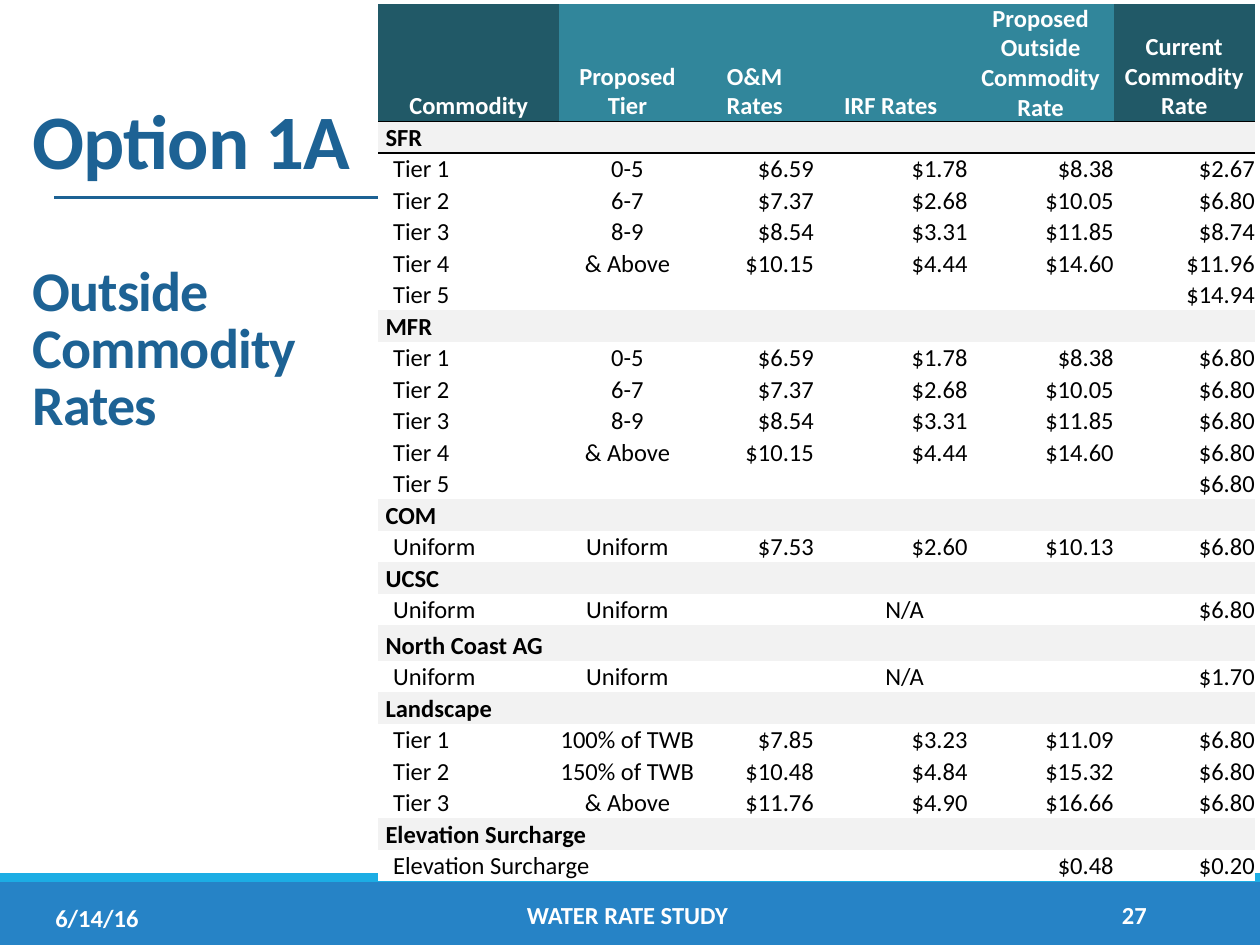
"""Build the Option 1A slide of outside commodity water rates."""
from dataclasses import dataclass

from lxml import etree
from pptx import Presentation
from pptx.dml.color import RGBColor
from pptx.enum.shapes import MSO_CONNECTOR, MSO_SHAPE
from pptx.enum.text import MSO_ANCHOR, PP_ALIGN
from pptx.oxml.ns import qn
from pptx.util import Inches, Pt

LEFT, CENTER, RIGHT = PP_ALIGN.LEFT, PP_ALIGN.CENTER, PP_ALIGN.RIGHT
MIDDLE, BOTTOM = MSO_ANCHOR.MIDDLE, MSO_ANCHOR.BOTTOM
RECTANGLE, STRAIGHT = MSO_SHAPE.RECTANGLE, MSO_CONNECTOR.STRAIGHT
GRID_COLUMNS, GRID_ROWS = 1000, 750
GRID_UNIT = Inches(0.01)
PLAIN_TABLE = "{2D5ABB26-0587-4C30-8999-92F81FD0307C}"


@dataclass(frozen=True)
class Theme:
    """Colours, font and type sizes of the slide."""
    font: str = "Calibri"
    white: str = "FFFFFF"
    black: str = "000000"
    footer: str = "2683C6"
    footer_edge: str = "1CADE4"
    heading: str = "1D6294"
    header_dark: str = "215967"
    header_light: str = "31869B"
    section: str = "F2F2F2"
    body_size: int = 14
    title_size: int = 44
    subtitle_size: int = 32


@dataclass(frozen=True)
class Area:
    """A rectangle in grid columns and rows."""
    column: int
    row: int
    columns: int
    rows: int

    def lengths(self) -> list:
        """Return left, top, width and height."""
        return [n * GRID_UNIT for n in (self.column, self.row, self.columns, self.rows)]


@dataclass(frozen=True)
class Line:
    """A footer text with its place and alignment."""
    text: str
    area: Area
    align: PP_ALIGN


@dataclass(frozen=True)
class Section:
    """A customer class and its rate rows."""
    name: str
    rates: tuple
    name_height: int = 25
    name_span: int = 1
    no_rate_anchor: MSO_ANCHOR = BOTTOM


THEME = Theme()
TABLE_AREA = Area(300, 3, 696, 699)
COLUMN_WIDTHS = (144, 108, 94, 122, 116, 112)
HEADER_HEIGHT, RATE_HEIGHT = 72, 25
NAME_INDENT, RATE_INDENT = 6, 12
HEADERS = ("Commodity", "Proposed Tier", "O&M\nRates", "IRF Rates",
           "Proposed Outside Commodity Rate", "Current Commodity Rate")
TIERS = (
    ("Tier 1", "0-5", "$6.59", "$1.78", "$8.38"),
    ("Tier 2", "6-7", "$7.37", "$2.68", "$10.05"),
    ("Tier 3", "8-9", "$8.54", "$3.31", "$11.85"),
    ("Tier 4", "& Above", "$10.15", "$4.44", "$14.60"),
    ("Tier 5", "", "", "", ""),
)


def tiered(*current_rates: str) -> tuple:
    """Add current rates to the shared residential tiers."""
    return tuple((*tier, rate) for tier, rate in zip(TIERS, current_rates))


SECTIONS = (
    Section("SFR", tiered("$2.67", "$6.80", "$8.74", "$11.96", "$14.94")),
    Section("MFR", tiered(*["$6.80"] * 5)),
    Section("COM", (("Uniform", "Uniform", "$7.53", "$2.60", "$10.13", "$6.80"),)),
    Section("UCSC", (("Uniform", "Uniform", "N/A", "", "", "$6.80"),),
            no_rate_anchor=MIDDLE),
    Section("North Coast AG", (("Uniform", "Uniform", "N/A", "", "", "$1.70"),),
            name_height=28),
    Section("Landscape", (
        ("Tier 1", "100% of TWB", "$7.85", "$3.23", "$11.09", "$6.80"),
        ("Tier 2", "150% of TWB", "$10.48", "$4.84", "$15.32", "$6.80"),
        ("Tier 3", "& Above", "$11.76", "$4.90", "$16.66", "$6.80"))),
    Section("Elevation Surcharge",
            (("Elevation Surcharge", "", "", "", "$0.48", "$0.20"),), name_span=2),
)
FOOTER = (
    Line("WATER RATE STUDY", Area(145, 706, 706, 40), CENTER),
    Line("27", Area(851, 706, 69, 40), RIGHT),
    Line("6/14/16", Area(34, 708, 111, 40), LEFT),
)


def style(paragraph, color: str, size: int, bold: bool, align: PP_ALIGN) -> None:
    """Set the font and alignment of a paragraph."""
    paragraph.alignment = align
    font = paragraph.font
    font.name, font.size, font.bold = THEME.font, Pt(size), bold
    font.color.rgb = RGBColor.from_string(color)


def draw_band(slide, area: Area, color: str) -> None:
    """Draw a plain filled band."""
    band = slide.shapes.add_shape(RECTANGLE, *area.lengths())
    band.shadow.inherit = False
    band.fill.solid()
    band.fill.fore_color.rgb = RGBColor.from_string(color)
    band.line.fill.background()


def draw_rule(slide, start: int, end: int, row: int) -> None:
    """Draw the horizontal rule under the title."""
    rule = slide.shapes.add_connector(
        STRAIGHT, *(n * GRID_UNIT for n in (start, row, end, row)))
    rule.line.color.rgb = RGBColor.from_string(THEME.heading)
    rule.line.width = Pt(1.5)
    etree.SubElement(rule._element.spPr, qn("a:effectLst"))


def add_frame(slide, area: Area, anchor: MSO_ANCHOR):
    """Add a wrapping text box and return its text frame."""
    frame = slide.shapes.add_textbox(*area.lengths()).text_frame
    frame.word_wrap, frame.vertical_anchor = True, anchor
    return frame


def draw_footer_line(slide, line: Line) -> None:
    """Write one footer text."""
    paragraph = add_frame(slide, line.area, MIDDLE).paragraphs[0]
    paragraph.text = line.text
    style(paragraph, THEME.white, THEME.body_size, True, line.align)


def draw_title(slide) -> None:
    """Write the title and subtitle."""
    frame = add_frame(slide, Area(16, 16, 276, 336), BOTTOM)
    frame.text = "Option 1A\nOutside Commodity Rates"
    for paragraph, size in zip(frame.paragraphs, (THEME.title_size, THEME.subtitle_size)):
        style(paragraph, THEME.heading, size, True, LEFT)
        paragraph.line_spacing = 0.85
        paragraph.runs[0]._r.get_or_add_rPr().set("spc", "-50")
    frame.paragraphs[1].space_before = Pt(46)


def fill_cell(cell, text: str, fill: str, color: str, bold: bool = False,
              align: PP_ALIGN = LEFT, indent: int = 0) -> None:
    """Write and format one table cell."""
    cell.margin_left = indent * GRID_UNIT
    cell.margin_top = cell.margin_right = cell.margin_bottom = 0
    cell.vertical_anchor = BOTTOM
    cell.fill.solid()
    cell.fill.fore_color.rgb = RGBColor.from_string(fill)
    cell.text = text
    for paragraph in cell.text_frame.paragraphs:
        style(paragraph, color, THEME.body_size, bold, align)
        if not text:
            end = etree.SubElement(paragraph._p, qn("a:endParaRPr"))
            end.set("sz", str(THEME.body_size * 100))


def border_cell(cell, side: str) -> None:
    """Give one side of a cell a thin black border."""
    border = etree.Element(qn(f"a:{side}"), w=str(Pt(1)))
    solid = etree.SubElement(border, qn("a:solidFill"))
    etree.SubElement(solid, qn("a:srgbClr"), val=THEME.black)
    cell._tc.get_or_add_tcPr().insert(0, border)


def draw_section(table, section: Section, top: int) -> int:
    """Fill a section from the given row and return the next free row."""
    table.rows[top].height = section.name_height * GRID_UNIT
    for column in range(len(HEADERS)):
        fill_cell(table.cell(top, column), "" if column else section.name,
                  THEME.section, THEME.black, True, indent=0 if column else NAME_INDENT)
    for row, rates in enumerate(section.rates, top + 1):
        for column, text in enumerate(rates):
            align = (LEFT, CENTER)[column] if column < 2 else RIGHT
            fill_cell(table.cell(row, column), text, THEME.white, THEME.black,
                      align=CENTER if text == "N/A" else align,
                      indent=0 if column else RATE_INDENT)
        if "N/A" in rates:
            table.cell(row, 2).merge(table.cell(row, 4))
            table.cell(row, 2).vertical_anchor = section.no_rate_anchor
    end = top + 1 + len(section.rates)
    if section.name_span > 1:
        for row in range(top, end):
            table.cell(row, 0).merge(table.cell(row, section.name_span - 1))
    return end


def draw_rates(slide) -> None:
    """Draw the table of commodity rates."""
    row_count = 1 + sum(1 + len(section.rates) for section in SECTIONS)
    graphic = slide.shapes.add_table(row_count, len(HEADERS), *TABLE_AREA.lengths())
    table = graphic.table
    table.first_row = table.horz_banding = False
    table._tbl.tblPr.find(qn("a:tableStyleId")).text = PLAIN_TABLE
    for column, width in zip(table.columns, COLUMN_WIDTHS):
        column.width = width * GRID_UNIT
    for row in table.rows:
        row.height = RATE_HEIGHT * GRID_UNIT
    table.rows[0].height = HEADER_HEIGHT * GRID_UNIT
    for column, text in enumerate(HEADERS):
        outer = column in (0, len(HEADERS) - 1)
        fill_cell(table.cell(0, column), text,
                  THEME.header_dark if outer else THEME.header_light,
                  THEME.white, True, CENTER)
    top = 1
    for section in SECTIONS:
        top = draw_section(table, section, top)
    for column in range(len(HEADERS)):
        border_cell(table.cell(0, column), "lnB")
        border_cell(table.cell(1, column), "lnT")


def main() -> None:
    """Build and save the slide."""
    deck = Presentation()
    deck.slide_width, deck.slide_height = GRID_COLUMNS * GRID_UNIT, GRID_ROWS * GRID_UNIT
    slide = deck.slides.add_slide(deck.slide_layouts[6])
    draw_band(slide, Area(0, 700, GRID_COLUMNS, 50), THEME.footer)
    draw_band(slide, Area(0, 693, GRID_COLUMNS, 7), THEME.footer_edge)
    draw_rule(slide, 43, 956, 157)
    for line in FOOTER:
        draw_footer_line(slide, line)
    draw_rates(slide)
    draw_title(slide)
    deck.save("out.pptx")


if __name__ == "__main__":
    main()
